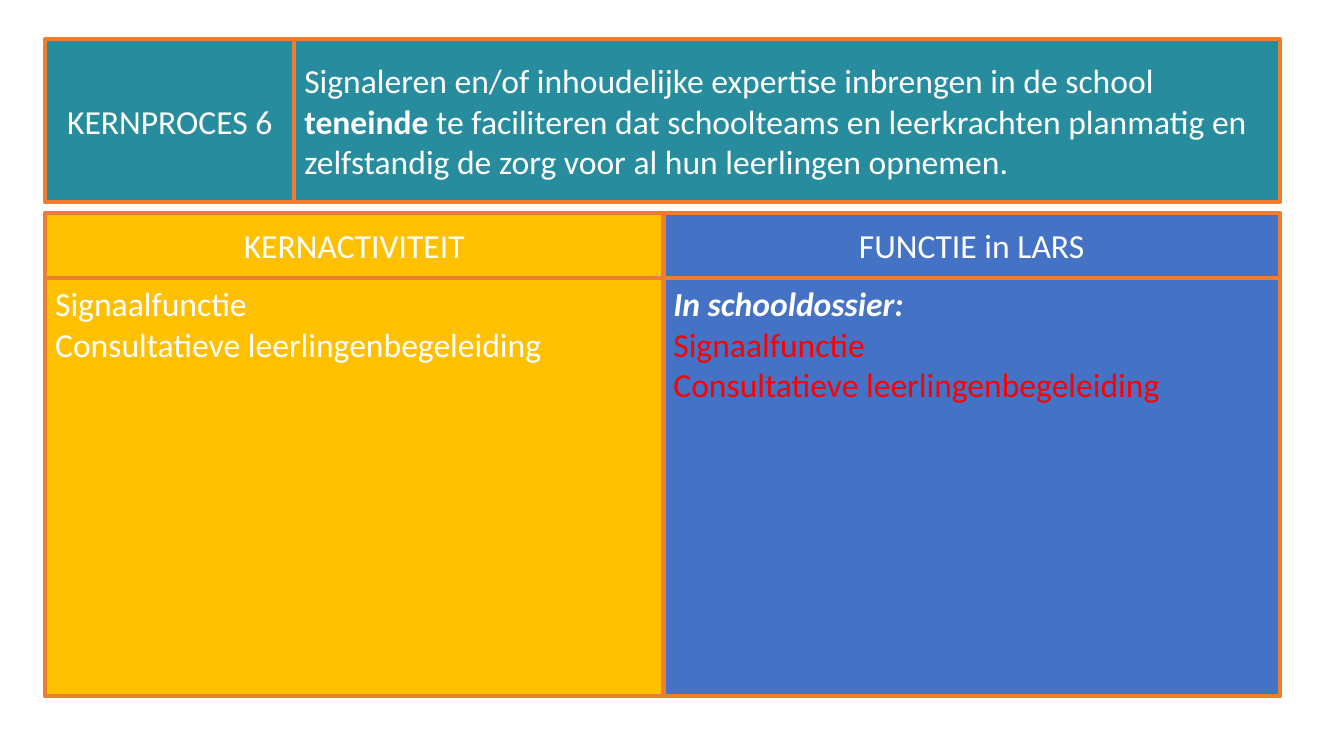
import pptx
import pptx.dml.color
import pptx.enum.shapes
import pptx.enum.text
import pptx.util
from pptx.util import Cm

# Content: each paragraph is a list of (text, format) runs
PROCESS_NAME = [[("KERNPROCES 6", {})]]
PROCESS_GOAL = [[
    ("Signaleren en/of inhoudelijke expertise inbrengen in de school ", {}),
    ("teneinde", {"bold": True}),
    (" te faciliteren dat schoolteams en leerkrachten planmatig en "
     "zelfstandig de zorg voor al hun leerlingen opnemen.", {}),
]]
ACTIVITIES = ["Signaalfunctie", "Consultatieve leerlingenbegeleiding"]
COLUMNS = [
    {"fill": "yellow",
     "heading": [[("KERNACTIVITEIT", {})]],
     "body": [[(activity, {})] for activity in ACTIVITIES]},
    {"fill": "blue",
     "heading": [[("FUNCTIE in LARS", {})]],
     "body": [[("In schooldossier:", {"bold": True, "italic": True})]]
             + [[(activity, {"color": "red"})] for activity in ACTIVITIES]},
]
COLORS = {"teal": "278C9D", "yellow": "FFC000", "blue": "4472C4",
          "orange": "ED7D31", "white": "FFFFFF", "red": "FF0000"}

# Layout in centimetres
LEFT, RIGHT = 1.14, 32.25
BANNER_TOP, BANNER_BOTTOM, BANNER_SPLIT = 0.98, 5.1, 7.42
COLUMN_EDGES = [LEFT, 16.72, RIGHT]
HEADING_TOP, BODY_TOP, BODY_BOTTOM = 5.36, 7.01, 17.55


def rgb(name):
    return pptx.dml.color.RGBColor.from_string(COLORS[name])


def add_run(paragraph, text, size=24, color="white", bold=False, italic=False):
    run = paragraph.add_run()
    run.text = text
    run.font.name = "Calibri"
    run.font.size = pptx.util.Pt(size)
    run.font.bold, run.font.italic = bold, italic
    run.font.color.rgb = rgb(color)


def format_box(shape, edges, paragraphs, fill, centered=False, anchor="MIDDLE"):
    left, top, right, bottom = edges
    shape.left, shape.top = Cm(left), Cm(top)
    shape.width, shape.height = Cm(right - left), Cm(bottom - top)
    shape.fill.solid()
    shape.fill.fore_color.rgb = rgb(fill)
    shape.line.color.rgb = rgb("orange")
    shape.line.width = pptx.util.Pt(3)

    frame = shape.text_frame
    frame.word_wrap = True
    frame.auto_size = pptx.enum.text.MSO_AUTO_SIZE.NONE
    frame.vertical_anchor = pptx.enum.text.MSO_ANCHOR[anchor]
    alignment = pptx.enum.text.PP_ALIGN["CENTER" if centered else "LEFT"]
    for index, runs in enumerate(paragraphs):
        paragraph = frame.add_paragraph() if index else frame.paragraphs[0]
        paragraph.alignment = alignment
        for text, run_format in runs:
            add_run(paragraph, text, **run_format)


def add_box(slide, *args, **kwargs):
    shape = slide.shapes.add_shape(
        pptx.enum.shapes.MSO_SHAPE.RECTANGLE, 0, 0, 0, 0)
    shape.shadow.inherit = False
    format_box(shape, *args, **kwargs)


def main():
    presentation = pptx.Presentation()
    presentation.slide_width, presentation.slide_height = Cm(33.87), Cm(19.05)
    slide = presentation.slides.add_slide(presentation.slide_layouts[5])

    # Banner: the process name is the slide title
    format_box(slide.shapes.title,
               (LEFT, BANNER_TOP, BANNER_SPLIT, BANNER_BOTTOM),
               PROCESS_NAME, "teal", centered=True)
    add_box(slide, (BANNER_SPLIT, BANNER_TOP, RIGHT, BANNER_BOTTOM),
            PROCESS_GOAL, "teal")

    # Two columns, each a heading above a body
    for column, left, right in zip(COLUMNS, COLUMN_EDGES, COLUMN_EDGES[1:]):
        add_box(slide, (left, HEADING_TOP, right, BODY_TOP),
                column["heading"], column["fill"], centered=True)
        add_box(slide, (left, BODY_TOP, right, BODY_BOTTOM),
                column["body"], column["fill"], anchor="TOP")

    presentation.save("out.pptx")


if __name__ == "__main__":
    main()
